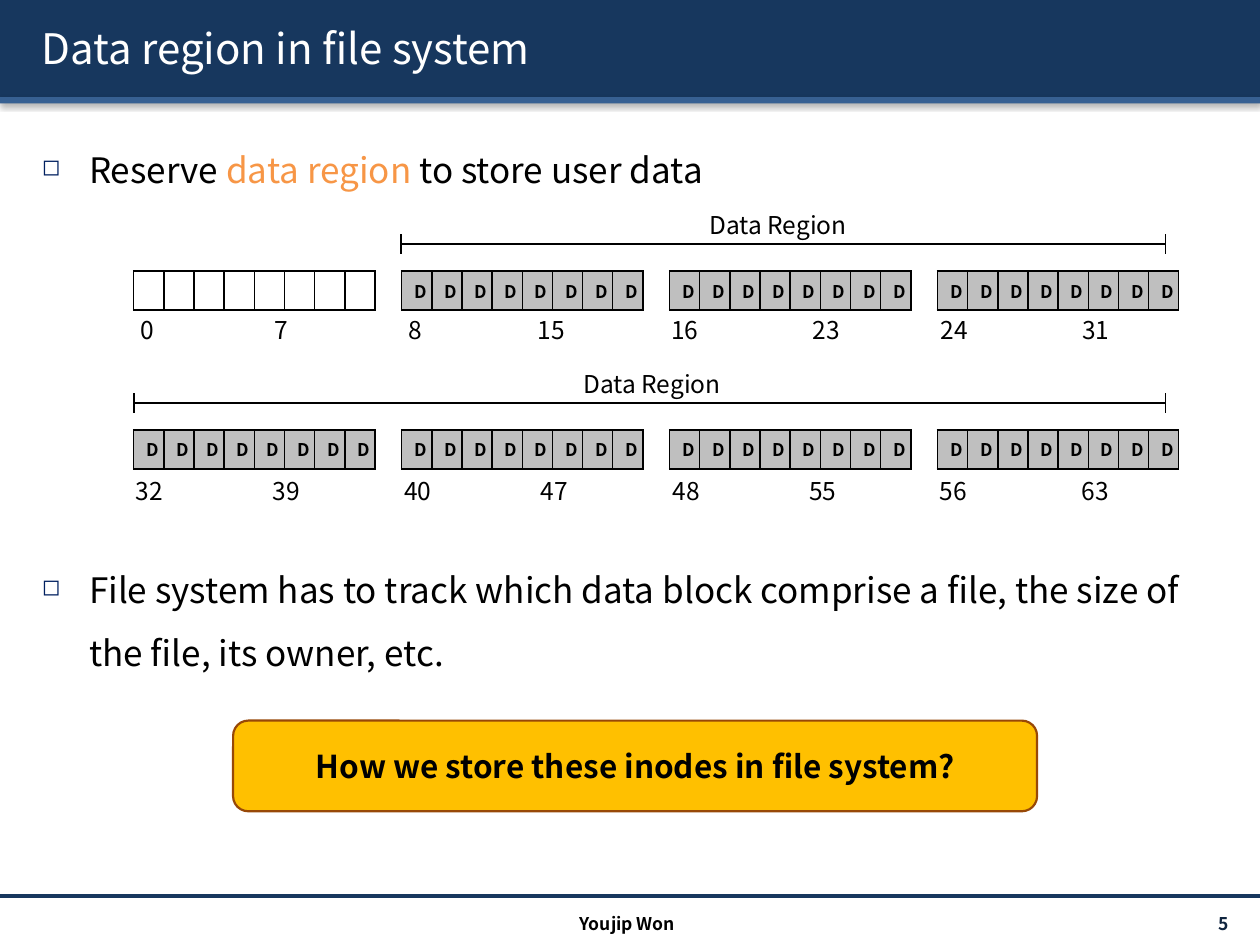
from dataclasses import dataclass

from lxml import etree
from pptx import Presentation
from pptx.dml.color import RGBColor
from pptx.enum.shapes import MSO_CONNECTOR, MSO_SHAPE
from pptx.enum.text import MSO_ANCHOR, PP_ALIGN
from pptx.oxml.ns import qn
from pptx.util import Pt

LEFT, CENTER, RIGHT = PP_ALIGN.LEFT, PP_ALIGN.CENTER, PP_ALIGN.RIGHT
TOP, MIDDLE = MSO_ANCHOR.TOP, MSO_ANCHOR.MIDDLE
RECT, ROUNDED = MSO_SHAPE.RECTANGLE, MSO_SHAPE.ROUNDED_RECTANGLE
STRAIGHT = MSO_CONNECTOR.STRAIGHT

FONT = "Noto Sans CJK KR"
BLACK, WHITE, NAVY, GRAY = "000000", "FFFFFF", "17375E", "BFBFBF"
GROUP_X, GROUP_STEP, CELL_W, CELL_H, CELLS = 76.4, 153.1, 16.4, 22.4, 8


@dataclass
class Group:
    first: int
    label_x: float
    tab: float


@dataclass
class Row:
    table_y: float
    label_y: float
    bracket_x: float
    caption_x: float
    groups: list[Group]


ROWS = [
    Row(154.8, 176.4, 229.2, 398.2, [
        Group(0, 73.4, 76.5), Group(8, 226.6, 73.5),
        Group(16, 376.4, 81), Group(24, 530.4, 81)]),
    Row(245.6, 268.6, 76.4, 326.2, [
        Group(32, 70.6, 78), Group(40, 223.8, 78),
        Group(48, 377.3, 78), Group(56, 530, 81)]),
]


def rgb(value: str) -> RGBColor:
    return RGBColor.from_string(value)


def add_xml(parent, tag: str, **attrs: str):
    return etree.SubElement(parent, qn(tag), attrs)


def add_shadow(effects, color: str, alpha: int, blur: float, dist: float, angle: int) -> None:
    shadow = add_xml(effects, "a:outerShdw", blurRad=str(Pt(blur)), dist=str(Pt(dist)),
                     dir=str(angle * 60000), algn="tl", rotWithShape="0")
    clr = add_xml(shadow, "a:srgbClr", val=color)
    add_xml(clr, "a:alpha", val=str(alpha * 1000))


def add_run(p, text: str, size: float, color: str = BLACK, bold: bool = False):
    r = p.add_run()
    r.text = text
    r.font.name, r.font.size, r.font.bold = FONT, Pt(size), bold
    r.font.color.rgb = rgb(color)
    return r


def add_box(s, x: float, y: float, w: float, h: float, anchor=TOP):
    tf = s.shapes.add_textbox(Pt(x), Pt(y), Pt(w), Pt(h)).text_frame
    tf.word_wrap, tf.vertical_anchor = True, anchor
    return tf


def add_label(s, x: float, y: float, w: float, h: float, text: str, size: float,
              color: str = BLACK, bold: bool = False, align=LEFT, anchor=TOP):
    p = add_box(s, x, y, w, h, anchor).paragraphs[0]
    p.alignment = align
    return add_run(p, text, size, color, bold)


def add_block(s, kind, x: float, y: float, w: float, h: float, fill: str):
    sp = s.shapes.add_shape(kind, Pt(x), Pt(y), Pt(w), Pt(h))
    sp.fill.solid()
    sp.fill.fore_color.rgb = rgb(fill)
    sp.line.fill.background()
    sp.shadow.inherit = False
    return sp


def add_bar(s, y: float, h: float, fill: str) -> None:
    sp = add_block(s, RECT, 0, y, 720, h, fill)
    add_shadow(sp.element.spPr.find(qn("a:effectLst")), BLACK, 38, 3.1, 1.6, 90)


def add_line(s, x1: float, y1: float, x2: float, y2: float,
             color: str = BLACK, width: float = 1) -> None:
    line = s.shapes.add_connector(STRAIGHT, Pt(x1), Pt(y1), Pt(x2), Pt(y2))
    line.line.color.rgb, line.line.width = rgb(color), Pt(width)
    add_xml(line.element.spPr, "a:effectLst")


def add_bullet(p, runs: list[tuple[str, str]], space_before: float) -> None:
    pPr = p._p.get_or_add_pPr()
    pPr.set("marL", str(Pt(27)))
    pPr.set("indent", str(Pt(-27)))
    add_xml(add_xml(pPr, "a:buClr"), "a:srgbClr", val="002060")
    add_xml(pPr, "a:buSzPct", val="65000")
    add_xml(pPr, "a:buChar", char="◻")
    p.line_spacing, p.space_before = 1.5, Pt(space_before)
    for text, color in runs:
        add_run(p, text, 20, color)


def add_borders(cell) -> None:
    tcPr = cell._tc.get_or_add_tcPr()
    for i, side in enumerate(("a:lnL", "a:lnR", "a:lnT", "a:lnB")):
        ln = etree.Element(qn(side), w=str(Pt(1)))
        add_xml(add_xml(ln, "a:solidFill"), "a:srgbClr", val=BLACK)
        tcPr.insert(i, ln)


def add_group(s, x: float, y: float, used: bool) -> None:
    frame = s.shapes.add_table(1, CELLS, Pt(x), Pt(y), Pt(CELL_W * CELLS), Pt(CELL_H))
    table = frame.table
    table.first_row = table.horz_banding = False
    for column, cell in zip(table.columns, table.iter_cells()):
        column.width = Pt(CELL_W)
        cell.fill.solid()
        cell.fill.fore_color.rgb = rgb(GRAY if used else WHITE)
        cell.margin_top = cell.margin_bottom = 0
        cell.vertical_anchor = MIDDLE
        add_borders(cell)
        if used:
            p = cell.text_frame.paragraphs[0]
            p.alignment = CENTER
            add_run(p, "D", 10, bold=True)


def add_indexes(s, group: Group, y: float) -> None:
    p = add_box(s, group.label_x, y, 148, 24.5).paragraphs[0]
    tabs = add_xml(p._p.get_or_add_pPr(), "a:tabLst")
    add_xml(tabs, "a:tab", pos=str(Pt(group.tab)), algn="l")
    add_run(p, f"{group.first}\t{group.first + CELLS - 1}", 14)


def add_row(s, row: Row) -> None:
    for i, group in enumerate(row.groups):
        add_group(s, GROUP_X + i * GROUP_STEP, row.table_y, group.first > 0)
        add_indexes(s, group, row.label_y)
    y, right = row.table_y - 15.2, 666
    for x in (row.bracket_x, right):
        add_line(s, x, y - 5.8, x, y + 5.8)
    add_line(s, row.bracket_x, y, right, y)
    add_label(s, row.caption_x, y - 23, 98, 24.5, "Data Region", 14)


def main() -> None:
    """Build the data region slide and save it."""
    prs = Presentation()
    prs.slide_width, prs.slide_height = Pt(720), Pt(540)
    s = prs.slides.add_slide(prs.slide_layouts[6])

    add_bar(s, 0, 55.5, NAVY)
    add_bar(s, 55.5, 3.6, "376092")
    add_line(s, 0, 512, 720, 512, NAVY, 2)
    title = add_label(s, 16.8, 4.3, 692, 46, "Data region in file system", 24, WHITE, anchor=MIDDLE)
    effects = etree.Element(qn("a:effectLst"))
    add_shadow(effects, BLACK, 100, 0, 1.5, 45)
    title._r.get_or_add_rPr().find(qn("a:solidFill")).addnext(effects)

    tf = add_box(s, 16.8, 69.1, 692, 433.4)
    add_bullet(tf.paragraphs[0], [("Reserve ", BLACK), ("data region", "F79646"),
                                  (" to store user data", BLACK)], 0)
    add_bullet(tf.add_paragraph(), [("File system has to track which data block comprise a file, "
                                     "the size of the file, its owner, etc.", BLACK)], 204)

    add_label(s, 627, 519, 82, 17.3, "5", 10, "0F243E", True, RIGHT, MIDDLE)
    add_label(s, 239, 518.4, 239, 17.3, "Youjip Won", 10, bold=True, align=CENTER)
    for row in ROWS:
        add_row(s, row)

    sp = add_block(s, ROUNDED, 133.2, 411.8, 459.4, 51.8, "FFC000")
    sp.line.color.rgb, sp.line.width = rgb("984807"), Pt(1.25)
    tf = sp.text_frame
    tf.word_wrap, tf.vertical_anchor = True, MIDDLE
    p = tf.paragraphs[0]
    p.alignment = CENTER
    add_run(p, "How we store these inodes in file system?", 18, bold=True)

    prs.save("out.pptx")


if __name__ == "__main__":
    main()
